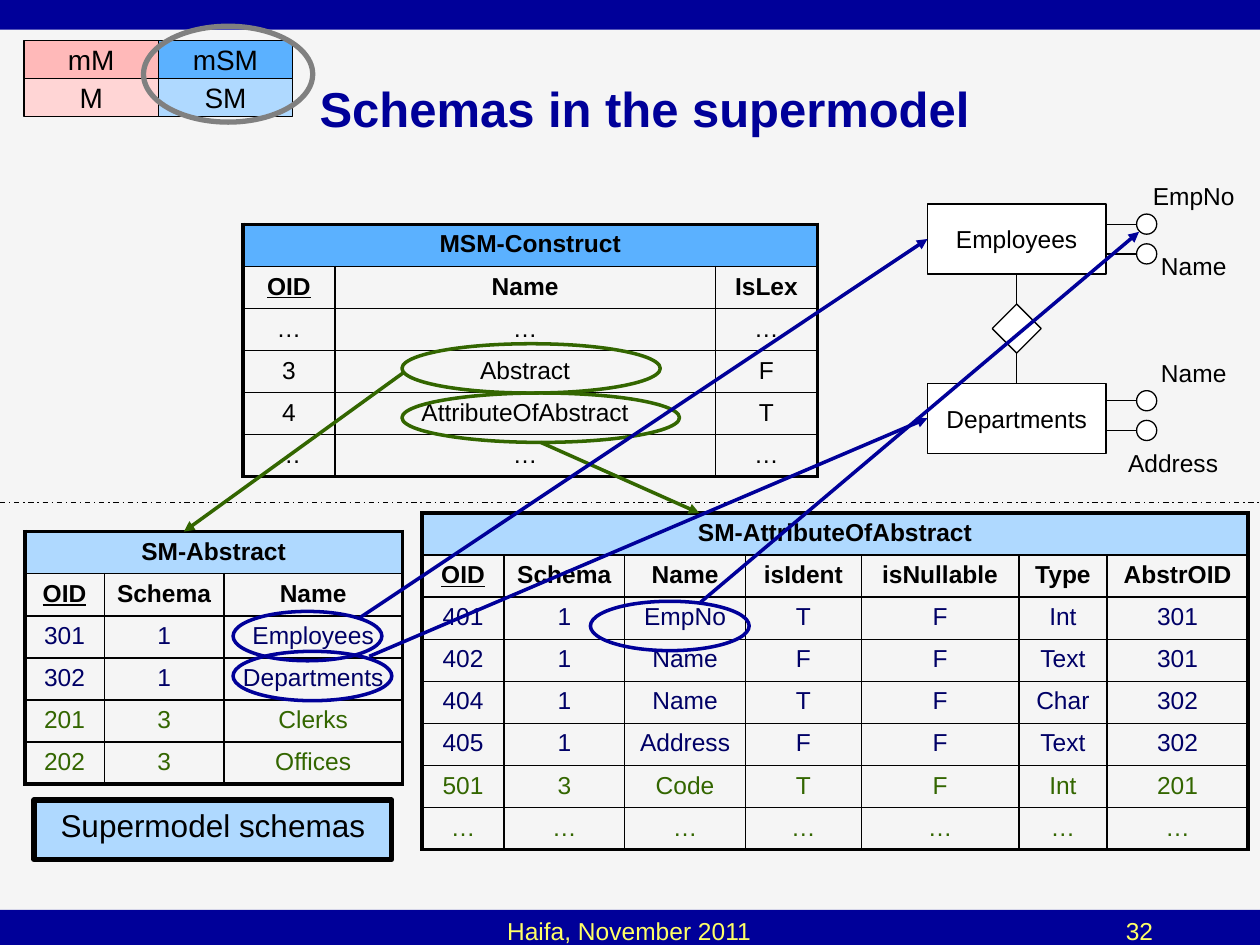
from dataclasses import dataclass
from lxml.etree import SubElement
from pptx import Presentation
from pptx.dml.color import RGBColor
from pptx.enum.dml import MSO_LINE
from pptx.enum.shapes import MSO_CONNECTOR, MSO_SHAPE
from pptx.enum.text import MSO_ANCHOR, PP_ALIGN
from pptx.oxml import parse_xml
from pptx.oxml.ns import nsdecls, qn
from pptx.util import Pt


@dataclass(frozen=True)
class Theme:
    font: str = "Arial"
    page: str = "F5F5F5"
    navy: str = "000099"
    ink: str = "000066"
    green: str = "336600"
    black: str = "000000"
    white: str = "FFFFFF"
    gray: str = "808080"
    yellow: str = "FFFF66"
    blue: str = "5BB1FF"
    pale: str = "AFD9FF"
    rose: str = "FFB9B9"
    blush: str = "FFD5D5"
    title: int = 28
    label: int = 18
    key: int = 16
    body: int = 14
    thin: float = 0.75
    rule: float = 1
    edge: float = 2.25
    mark: float = 2
    bold: float = 3


T = Theme()


def assign(item, **values):
    for name, value in values.items():
        setattr(item, name, value)


def points(box):
    return [Pt(round(v, 2)) for v in box]


def write(frame, text, size, color=T.black, align=PP_ALIGN.CENTER, **style):
    para = frame.paragraphs[0]
    para.alignment = align
    run = para.add_run()
    run.text = text
    assign(run.font, name=T.font, size=Pt(size), **style)
    run.font.color.rgb = RGBColor.from_string(color)


def shape(slide, kind, box, fill=None, line=None, width=T.thin):
    item = slide.shapes.add_shape(kind, *points(box))
    item.shadow.inherit = False
    if fill:
        item.fill.solid()
        item.fill.fore_color.rgb = RGBColor.from_string(fill)
    else:
        item.fill.background()
    if line:
        item.line.color.rgb = RGBColor.from_string(line)
        item.line.width = Pt(width)
    else:
        item.line.fill.background()
    return item


def panel(slide, box, text, size, fill, width=T.thin, inset=0,
          anchor=MSO_ANCHOR.MIDDLE, wrap=True):
    item = shape(slide, MSO_SHAPE.RECTANGLE, box, fill, T.black, width)
    assign(item.text_frame, word_wrap=wrap, vertical_anchor=anchor,
           margin_top=Pt(inset), margin_bottom=Pt(inset))
    write(item.text_frame, text, size)
    return item


def label(slide, box, text, size=T.body, color=T.black,
          anchor=MSO_ANCHOR.TOP, **style):
    frame = slide.shapes.add_textbox(*points(box)).text_frame
    assign(frame, word_wrap=True, vertical_anchor=anchor, margin_bottom=0)
    write(frame, text, size, color, **style)


def link(slide, start, end, color=T.black, width=T.thin, head=False):
    item = slide.shapes.add_connector(
        MSO_CONNECTOR.STRAIGHT, *points(start), *points(end))
    item.line.color.rgb = RGBColor.from_string(color)
    item.line.width = Pt(width)
    if head:
        SubElement(item.line._get_or_add_ln(), qn("a:tailEnd"), type="triangle")
    SubElement(item._element.spPr, qn("a:effectLst"))
    return item


def border(cell, sides):
    props = cell._tc.get_or_add_tcPr()
    for spot, (side, width) in enumerate(sides.items()):
        props.insert(spot, parse_xml(
            f'<a:ln{side} {nsdecls("a")} w="{Pt(width)}"><a:solidFill>'
            f'<a:srgbClr val="{T.black}"/></a:solidFill></a:ln{side}>'))


def grid(slide, left, top, cols, rows, name, fill, data, tints):
    box = (left, top, sum(cols), sum(rows))
    table = slide.shapes.add_table(len(rows), len(cols), *points(box)).table
    assign(table, first_row=False, horz_banding=False)
    for col, width in zip(table.columns, cols):
        col.width = Pt(width)
    for row, height in zip(table.rows, rows):
        row.height = Pt(height)
    table.cell(0, 0).merge(table.cell(0, len(cols) - 1))
    for r, line in enumerate([[name]] + data):
        for c, text in enumerate(line):
            cell = table.cell(r, c)
            assign(cell, margin_left=Pt(3), margin_right=Pt(3))
            if r == 0:
                cell.fill.solid()
                cell.fill.fore_color.rgb = RGBColor.from_string(fill)
            else:
                cell.fill.background()
            outer = {"L": c == 0, "R": c == len(line) - 1,
                     "T": r == 0, "B": r == len(rows) - 1}
            border(cell, {k: T.edge if v else T.rule for k, v in outer.items()})
            write(cell.text_frame, text, T.body,
                  T.black if r < 2 else tints[r - 2],
                  bold=r < 2, underline=text == "OID")


def frame(slide, wide, high):
    slide.background.fill.solid()
    slide.background.fill.fore_color.rgb = RGBColor.from_string(T.page)
    for top, height in ((0, 17), (high - 20, 20)):
        shape(slide, MSO_SHAPE.RECTANGLE, (0, top, wide, height), T.navy)
    label(slide, (155.5, high - 20, 408, 20), "Haifa, November 2011", color=T.yellow)
    label(slide, (569.5, high - 20, 96.5, 20), "32", color=T.yellow,
          align=PP_ALIGN.RIGHT)
    label(slide, (31, 18, 674.6, 84.2), "Schemas in the supermodel", T.title,
          T.navy, MSO_ANCHOR.MIDDLE, bold=True)
    fold = link(slide, (0, 287), (wide, 287))
    fold.line.dash_style = MSO_LINE.DASH_DOT


def legend(slide, left, top, wide, high):
    w, h = wide / 2, high / 2
    rows = ((("mM", T.rose), ("mSM", T.blue)), (("M", T.blush), ("SM", T.pale)))
    for r, row in enumerate(rows):
        for c, (text, fill) in enumerate(row):
            panel(slide, (left + c * w, top + r * h, w, h), text, T.key, fill)
    shape(slide, MSO_SHAPE.OVAL, (left + w - 8.5, top - 8, w + 20, high + 11.2),
          line=T.gray, width=T.bold)


def model(slide, left, top, wide, high):
    tall, dot, gap, stub = 40, 11.5, 17, 17.5
    items = (("Employees", 0, 11.5, (("EmpNo", 114, -16.5), ("Name", 114, 23.1))),
             ("Departments", high - tall, 10,
              (("Name", 114, 84.3), ("Address", 102.2, 136.1))))
    boxes = []
    for name, down, first, attrs in items:
        boxes.append(panel(slide, (left, top + down, wide, tall), name, T.body,
                           T.white, wrap=False))
        for i, (text, x, y) in enumerate(attrs):
            mid = top + down + first + i * gap
            edge = left + wide
            link(slide, (edge, mid), (edge + stub, mid))
            shape(slide, MSO_SHAPE.OVAL, (edge + stub, mid - dot / 2, dot, dot),
                  T.white, T.black)
            label(slide, (left + x, top + y, 76.3, 23.8), text)
    side = 28
    joint = shape(slide, MSO_SHAPE.DIAMOND,
                  (left + (wide - side) / 2, top + (high - side) / 2, side, side),
                  T.white, T.black)
    for upper, lower in ((boxes[0], joint), (joint, boxes[1])):
        line = link(slide, (0, 0), (0, 0))
        line.begin_connect(upper, 2)
        line.end_connect(lower, 0)
    return boxes


def trace(slide, oval, start, end, color, goal=None):
    shape(slide, MSO_SHAPE.OVAL, oval, line=color, width=T.mark)
    line = link(slide, start, end, color, T.mark, True)
    if goal:
        line.end_connect(goal, 1)


def main():
    deck = Presentation()
    assign(deck, slide_width=Pt(720), slide_height=Pt(540))
    slide = deck.slides.add_slide(deck.slide_layouts[6])
    frame(slide, 720, 540)
    grid(slide, 14.2, 303.8, (45.4, 68.4, 102), [23.9] * 6, "SM-Abstract", T.pale,
         [["OID", "Schema", "Name"],
          ["301", "1", "Employees"], ["302", "1", "Departments"],
          ["201", "3", "Clerks"], ["202", "3", "Offices"]],
         [T.ink] * 2 + [T.green] * 2)
    grid(slide, 241.2, 293.2, (46.8, 69, 69, 66.2, 90, 50.4, 80.6),
         [23] * 2 + [24] * 6, "SM-AttributeOfAbstract", T.pale,
         [["OID", "Schema", "Name", "isIdent", "isNullable", "Type", "AbstrOID"],
          ["401", "1", "EmpNo", "T", "F", "Int", "301"],
          ["402", "1", "Name", "F", "F", "Text", "301"],
          ["404", "1", "Name", "T", "F", "Char", "302"],
          ["405", "1", "Address", "F", "F", "Text", "302"],
          ["501", "3", "Code", "T", "F", "Int", "201"],
          ["…"] * 7],
         [T.ink] * 4 + [T.green] * 2)
    grid(slide, 138.8, 128.2, (52.6, 217.4, 58.4), [23] * 6, "MSM-Construct", T.blue,
         [["OID", "Name", "IsLex"], ["…"] * 3, ["3", "Abstract", "F"],
          ["4", "AttributeOfAbstract", "T"], ["…"] * 3],
         [T.black] * 4)
    panel(slide, (19.4, 457.2, 204.5, 34), "Supermodel schemas", T.label, T.pale,
          T.bold, 3.6, MSO_ANCHOR.TOP)
    legend(slide, 13.8, 23, 153.4, 43.6)
    staff, dept = model(slide, 530, 116.6, 102, 142.4)
    trace(slide, (229.7, 196.4, 147.6, 28.2), (230.5, 213), (105.1, 303.8), T.green)
    trace(slide, (229.7, 224.6, 158.6, 28.2), (309, 252.8), (399.6, 293.2), T.green)
    trace(slide, (133.2, 349.4, 85, 28.2), (205.9, 352.8), (530, 136.6), T.navy, staff)
    trace(slide, (133.2, 372.2, 90.7, 28.2), (211, 375.1), (530, 239), T.navy, dept)
    trace(slide, (337.4, 343.6, 90.7, 28.2), (400.3, 344.2), (650.9, 132.5), T.navy)
    deck.save("out.pptx")


if __name__ == "__main__":
    main()
